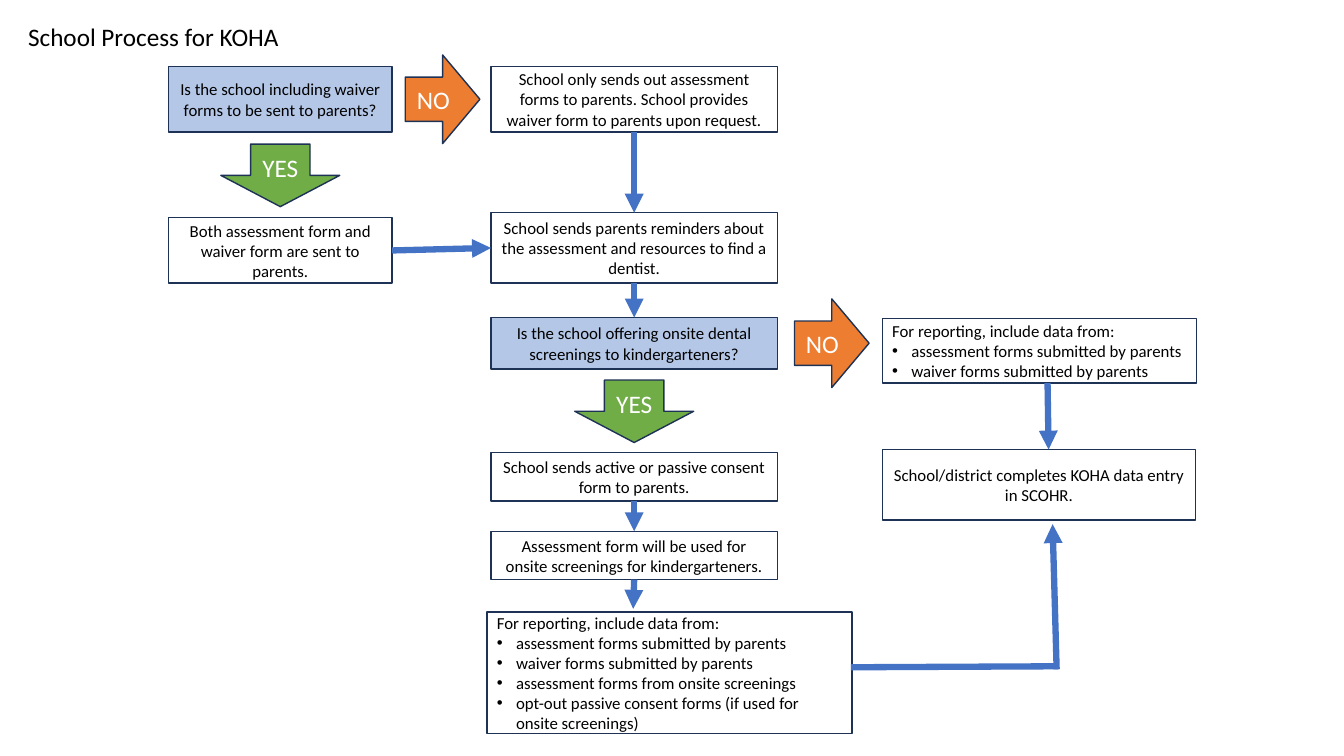
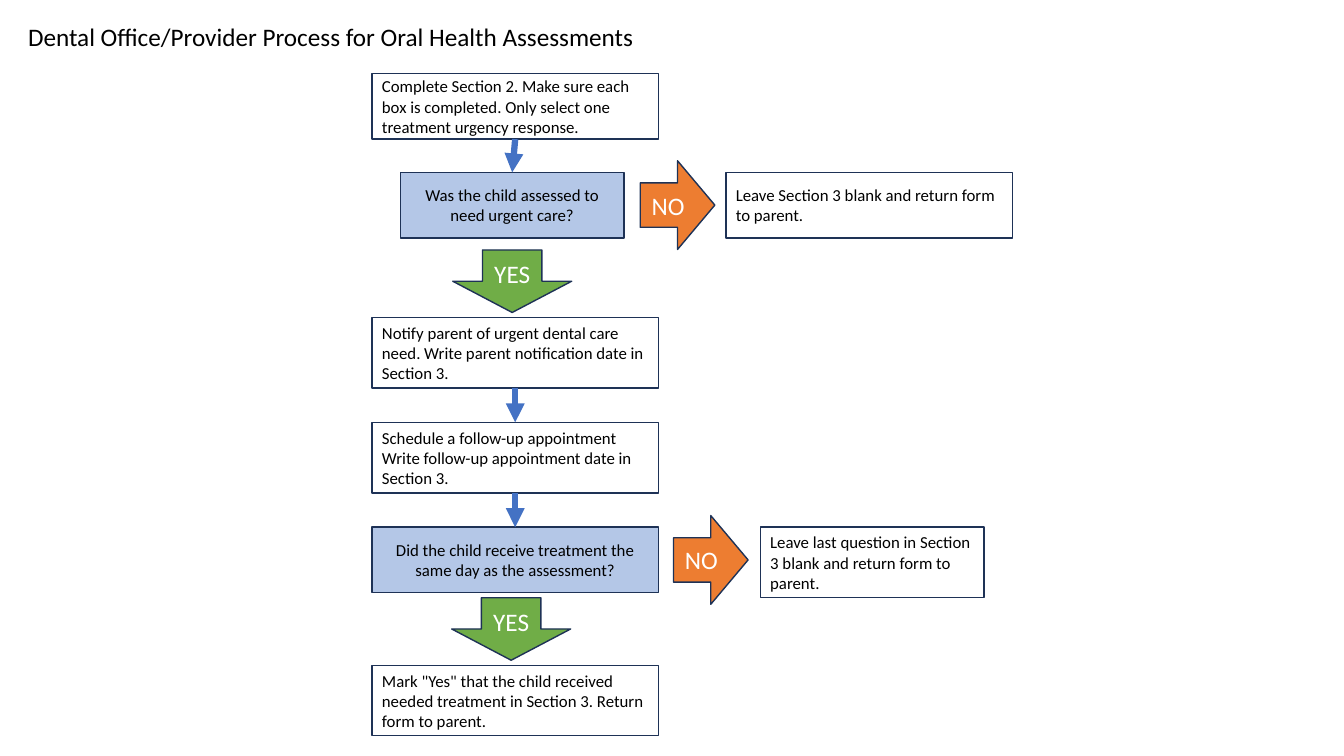
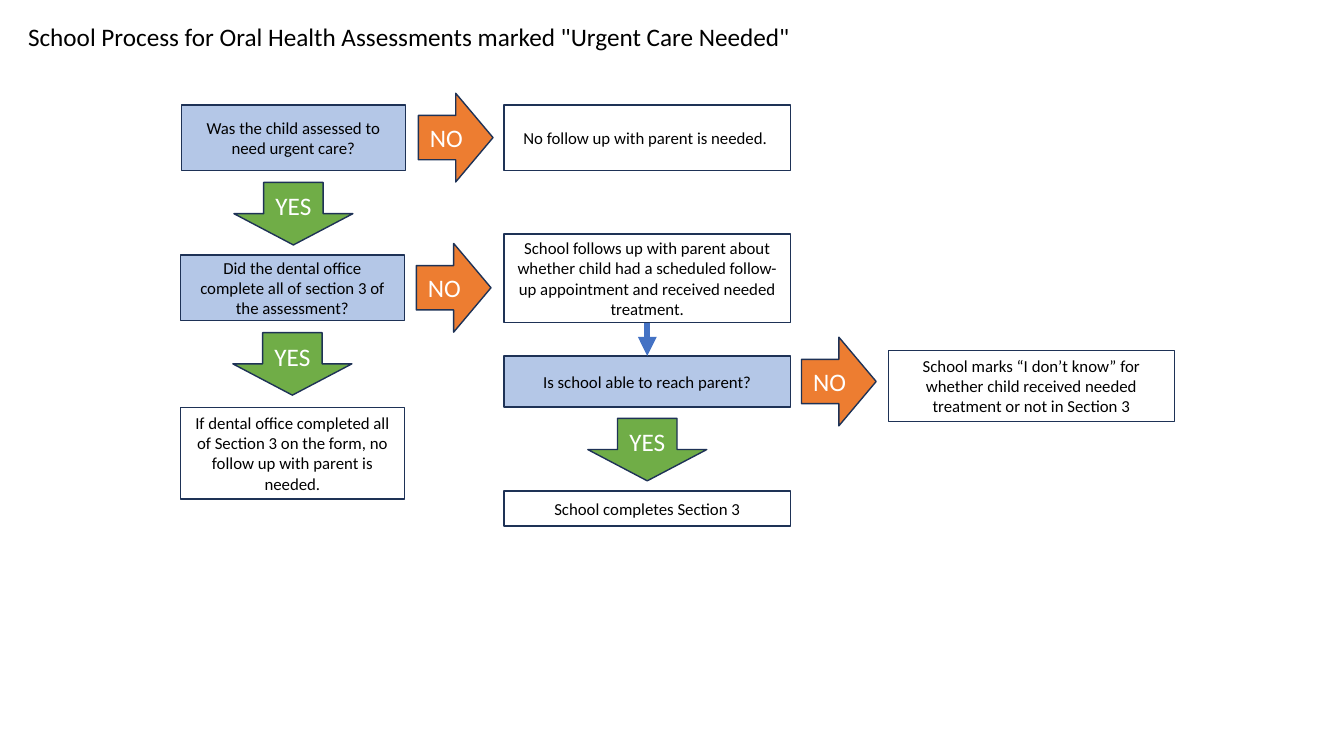
"""Build three flowchart slides about school oral health assessments."""
from lxml import etree
from pptx import Presentation
from pptx.dml.color import RGBColor
from pptx.enum import shapes, text
from pptx.oxml.ns import qn
from pptx.util import Emu, Pt

FONT = "Calibri"
BLACK, WHITE, OUTLINE = "000000", "FFFFFF", "1E3256"
QUESTION, NO, YES, FLOW = "B4C7E7", "ED7D31", "70AD47", "4472C4"
LEFT, CENTER = text.PP_ALIGN.LEFT, text.PP_ALIGN.CENTER
TOP, LEFT_SIDE, BOTTOM, RIGHT_SIDE = range(4)
NO_W, NO_H, YES_W, YES_H = 74, 88, 118, 62


def px(n):
    """Turn px, a hundred to the inch, into EMU."""
    return Emu(round(n * 9144))


def rgb(value):
    """Turn a hex string into a colour."""
    return RGBColor.from_string(value)


def write(tf, content, size, color, align):
    """Fill a text frame and format its runs."""
    tf.text = content
    tf.word_wrap = True
    for p in tf.paragraphs:
        p.alignment = align
        for r in p.runs:
            r.font.name = FONT
            r.font.size = Pt(size)
            r.font.color.rgb = rgb(color)


def bullet(p):
    """Give a paragraph a hanging round bullet."""
    pPr = p._p.get_or_add_pPr()
    pPr.set("marL", str(px(19)))
    pPr.set("indent", str(-px(19)))
    etree.SubElement(pPr, qn("a:buFont")).set("typeface", "Arial")
    etree.SubElement(pPr, qn("a:buChar")).set("char", "•")


def add_block(s, kind, x, y, w, h, content, fill, size=12, color=BLACK, align=CENTER):
    """Add an outlined, filled shape with text in its middle."""
    sp = s.shapes.add_shape(kind, px(x), px(y), px(w), px(h))
    sp.shadow.inherit = False
    sp.fill.solid()
    sp.fill.fore_color.rgb = rgb(fill)
    sp.line.color.rgb = rgb(OUTLINE)
    sp.line.width = Pt(1)
    sp.text_frame.vertical_anchor = text.MSO_ANCHOR.MIDDLE
    write(sp.text_frame, content, size, color, align)
    return sp


def add_step(s, x, y, w, h, content, align=CENTER):
    """Add a white process box."""
    return add_block(s, shapes.MSO_SHAPE.RECTANGLE, x, y, w, h, content, WHITE, align=align)


def add_report(s, x, y, w, h, *items):
    """Add a box that lists the data to report."""
    lines = ("For reporting, include data from:",) + items
    sp = add_step(s, x, y, w, h, "\n".join(lines), LEFT)
    for p in sp.text_frame.paragraphs[1:]:
        bullet(p)
    return sp


def add_question(s, x, y, w, h, content, no_gap, yes_gap=12, yes_shift=0):
    """Add a question box with a NO arrow on its right and a YES arrow below."""
    add_block(s, shapes.MSO_SHAPE.RIGHT_ARROW, x + w + no_gap, y + (h - NO_H) / 2,
              NO_W, NO_H, "NO", NO, 18, WHITE)
    add_block(s, shapes.MSO_SHAPE.DOWN_ARROW, x + (w - YES_W) / 2 + yes_shift,
              y + h + yes_gap, YES_W, YES_H, "YES", YES, 18, WHITE)
    return add_block(s, shapes.MSO_SHAPE.RECTANGLE, x, y, w, h, content, QUESTION)


def add_line(s, x1, y1, x2, y2, arrow=True):
    """Add a thick flow line, with an arrowhead unless told otherwise."""
    cn = s.shapes.add_connector(shapes.MSO_CONNECTOR.STRAIGHT, px(x1), px(y1), px(x2), px(y2))
    cn.line.color.rgb = rgb(FLOW)
    cn.line.width = Pt(4.5)
    if arrow:
        etree.SubElement(cn.line._get_or_add_ln(), qn("a:tailEnd")).set("type", "triangle")
    etree.SubElement(cn._element.spPr, qn("a:effectLst"))
    return cn


def join(s, start, end, sides=(BOTTOM, TOP)):
    """Join two boxes with an arrow between the middles of their sides."""
    cn = add_line(s, 0, 0, 0, 0)
    cn.begin_connect(start, sides[0])
    cn.end_connect(end, sides[1])


def add_slide(prs, title, title_w=896):
    """Add a blank slide with a title line."""
    s = prs.slides.add_slide(prs.slide_layouts[6])
    tb = s.shapes.add_textbox(px(18), px(16), px(title_w), px(40))
    write(tb.text_frame, title, 18, BLACK, LEFT)
    tb.text_frame.auto_size = text.MSO_AUTO_SIZE.SHAPE_TO_FIT_TEXT
    return s


def school_process(prs):
    """Draw the school process."""
    s = add_slide(prs, "School Process for KOHA", 321)
    x, w = 487, 284
    forms = ("assessment forms submitted by parents", "waiver forms submitted by parents")
    add_question(s, 167, 66, 222, 65,
                 "Is the school including waiver forms to be sent to parents?", 13)
    both = add_step(s, 167, 216, 222, 65,
                    "Both assessment form and waiver form are sent to parents.")
    only = add_step(s, x, 66, w, 65, "School only sends out assessment forms to parents. "
                    "School provides waiver form to parents upon request.")
    remind = add_step(s, x, 211, w, 70, "School sends parents reminders about the assessment "
                      "and resources to find a dentist.")
    onsite = add_question(s, x, 315, w, 51, "Is the school offering onsite dental screenings "
                          "to kindergarteners?", 17, 11)
    consent = add_step(s, x, 449, w, 48,
                       "School sends active or passive consent form to parents.")
    screening = add_step(s, x, 527, w, 48, "Assessment form will be used for onsite "
                         "screenings for kindergarteners.")
    add_report(s, 483, 607, 362, 121, *forms, "assessment forms from onsite screenings",
               "opt-out passive consent forms (if used for onsite screenings)")
    add_report(s, 875, 316, 312, 64, *forms)
    add_step(s, 875, 446, 311, 70, "School/district completes KOHA data entry in SCOHR.")
    join(s, both, remind, (RIGHT_SIDE, LEFT_SIDE))
    for start, end in ((only, remind), (remind, onsite), (consent, screening)):
        join(s, start, end)
    add_line(s, 629, 575, 628, 604).begin_connect(screening, BOTTOM)
    add_line(s, 1039, 380, 1040, 446)
    add_line(s, 844, 662, 1050, 661, arrow=False)
    add_line(s, 1048, 664, 1044, 520)


def provider_process(prs):
    """Draw the dental office process."""
    s = add_slide(prs, "Dental Office/Provider Process for Oral Health Assessments")
    x, w = 369, 284
    complete = add_step(s, x, 73, w, 65, "Complete Section 2. Make sure each box is completed. "
                        "Only select one treatment urgency response.", LEFT)
    urgent = add_question(s, 397, 171, 222, 65,
                          "Was the child assessed to need urgent care?", 16)
    add_step(s, 720, 171, w, 65, "Leave Section 3 blank and return form to parent.", LEFT)
    notify = add_step(s, x, 315, w, 70, "Notify parent of urgent dental care need. "
                      "Write parent notification date in Section 3.", LEFT)
    schedule = add_step(s, x, 419, w, 70, "Schedule a follow-up appointment "
                        "Write follow-up appointment date in Section 3.", LEFT)
    same_day = add_question(s, x, 523, w, 65, "Did the child receive treatment the same day "
                            "as the assessment?", 15, 5, -4)
    add_step(s, 754, 523, 222, 70,
             "Leave last question in Section 3 blank and return form to parent.", LEFT)
    add_step(s, x, 660, w, 70, 'Mark "Yes" that the child received needed treatment '
             "in Section 3. Return form to parent.", LEFT)
    for start, end in ((complete, urgent), (notify, schedule), (schedule, same_day)):
        join(s, start, end)


def urgent_process(prs):
    """Draw the school process for urgent care."""
    s = add_slide(prs, 'School Process for Oral Health Assessments marked "Urgent Care Needed"')
    x, w = 500, 284
    add_question(s, 180, 104, 222, 65, "Was the child assessed to need urgent care?", 13)
    add_question(s, 179, 253, 222, 65,
                 "Did the dental office complete all of section 3 of the assessment?", 12)
    add_step(s, 179, 404, 222, 91, "If dental office completed all of Section 3 on the form, "
             "no follow up with parent is needed.")
    add_step(s, x, 104, w, 65, "No follow up with parent is needed. ")
    follow_up = add_step(s, x, 232, w, 88, "School follows up with parent about whether child "
                         "had a scheduled follow-up appointment and received needed treatment.")
    reach = add_question(s, x, 353, w, 51, "Is school able to reach parent?", 11, 11)
    add_step(s, x, 487, w, 35, "School completes Section 3")
    add_step(s, 881, 348, w, 70, "School marks “I don’t know” for whether child received "
             "needed treatment or not in Section 3")
    join(s, follow_up, reach)


def main():
    """Build and save the deck."""
    prs = Presentation()
    prs.slide_width, prs.slide_height = px(1333), px(750)
    for build in (school_process, provider_process, urgent_process):
        build(prs)
    prs.save("out.pptx")


if __name__ == "__main__":
    main()
